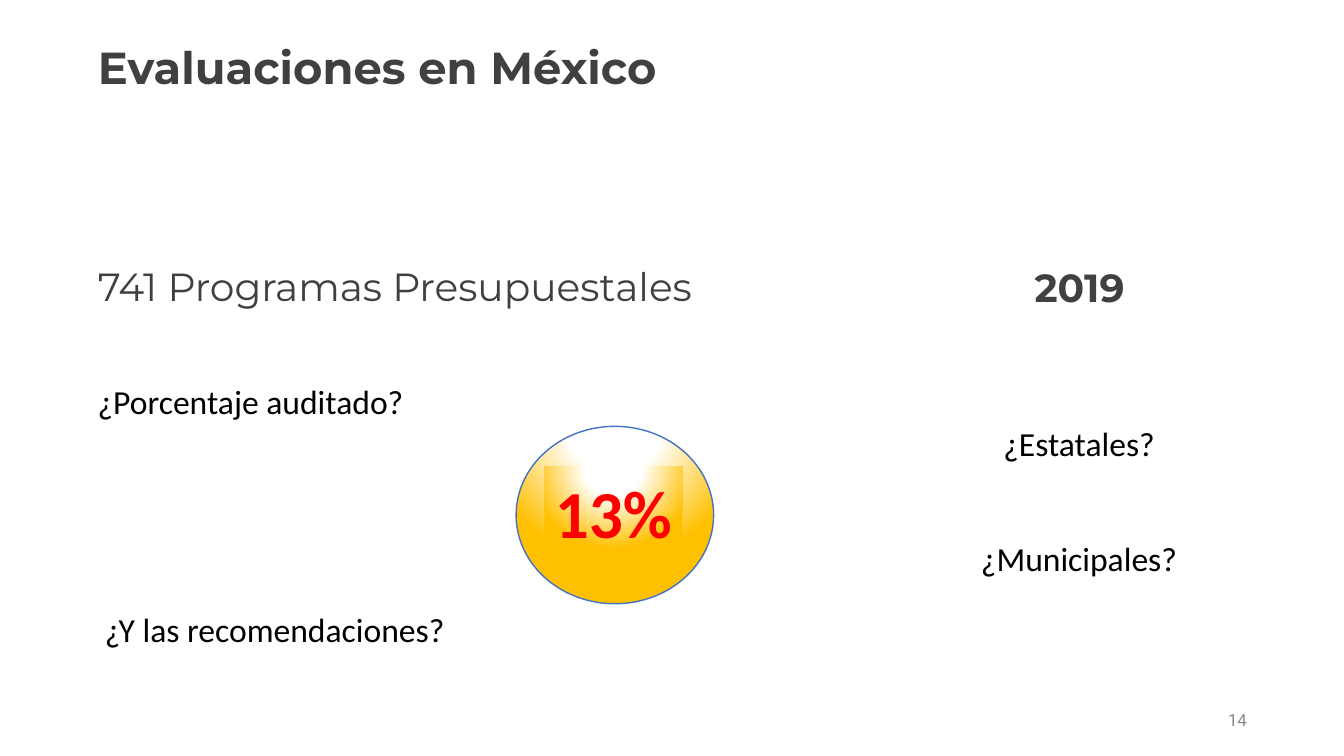
import dataclasses
import typing

import lxml.etree
import pptx
import pptx.dml.color
import pptx.enum.shapes
import pptx.enum.text
import pptx.oxml.ns
import pptx.util

Align = pptx.enum.text.PP_ALIGN
Anchor = pptx.enum.text.MSO_ANCHOR
AutoSize = pptx.enum.text.MSO_AUTO_SIZE
Preset = pptx.enum.shapes.MSO_SHAPE

CELL = pptx.util.Inches(0.1)
COLUMNS, ROWS = 133.33, 75


@dataclasses.dataclass(frozen=True)
class Theme:
    heading_font: str = "Montserrat"
    text_font: str = "Calibri"
    number_font: str = "Roboto"
    heading: str = "404040"
    text: str = "000000"
    number: str = "888888"
    accent: str = "FF0000"
    outline: str = "4472C4"
    glow: str = "FFFFFF"
    gold: str = "FFC000"
    title_size: int = 32
    heading_size: int = 28
    text_size: int = 24
    number_size: int = 12
    figure_size: int = 48


THEME = Theme()


class Area(typing.NamedTuple):
    column: float
    row: float
    columns: float
    rows: float

    def lengths(self) -> list[int]:
        return [round(value * CELL) for value in self]


@dataclasses.dataclass(frozen=True)
class Style:
    font: str
    size: int
    color: str
    bold: bool = False
    align: typing.Any = Align.CENTER
    anchor: typing.Any = Anchor.TOP
    side_inset: float = 0.1
    wrap: bool = False
    auto_size: typing.Any = AutoSize.SHAPE_TO_FIT_TEXT
    line_spacing: float = 1.0


@dataclasses.dataclass(frozen=True)
class Label:
    text: str
    area: Area
    style: Style


TITLE = Style(THEME.heading_font, THEME.title_size, THEME.heading, bold=True, align=Align.LEFT,
              side_inset=0.05, wrap=True, auto_size=AutoSize.NONE, line_spacing=0.9)
HEADING = dataclasses.replace(TITLE, size=THEME.heading_size, bold=False, anchor=Anchor.BOTTOM)
YEAR = dataclasses.replace(HEADING, bold=True, align=Align.CENTER)
QUESTION = Style(THEME.text_font, THEME.text_size, THEME.text)
WRAPPED_QUESTION = dataclasses.replace(QUESTION, wrap=True)
FIGURE = Style(THEME.text_font, THEME.figure_size, THEME.accent, bold=True)
NUMBER = Style(THEME.number_font, THEME.number_size, THEME.number, align=Align.RIGHT,
               anchor=Anchor.MIDDLE, side_inset=0.05)

PLACEHOLDERS = {
    0: Label("Evaluaciones en México", Area(9.2, 4, 66.9, 14.5), TITLE),
    1: Label("741 Programas Presupuestales", Area(9.2, 22.3, 62.1, 9), HEADING),
    3: Label("2019", Area(85.4, 22.4, 43.4, 9), YEAR),
}
LABELS = [
    Label("14", Area(121.3, 70, 2.9, 2.9), NUMBER),
    Label("¿Porcentaje auditado?", Area(8.4, 37.3, 32.9, 5), QUESTION),
    Label("¿Estatales?", Area(98.4, 41.5, 17.3, 5), QUESTION),
    Label("¿Municipales?", Area(96.2, 52.9, 21.7, 5), QUESTION),
    Label("¿Y las recomendaciones?", Area(9.2, 59.9, 36.1, 5), WRAPPED_QUESTION),
]
BALL = Area(51.2, 42.3, 19.6, 17.6)
PERCENTAGE = Label("13%", Area(54, 46.3, 13.7, 9.1), FIGURE)


def write_label(shape: typing.Any, label: Label) -> None:
    style = label.style
    shape.left, shape.top, shape.width, shape.height = label.area.lengths()
    frame = shape.text_frame
    frame.text = label.text
    frame.word_wrap = style.wrap
    frame.auto_size = style.auto_size
    frame.vertical_anchor = style.anchor
    frame.margin_left = frame.margin_right = pptx.util.Inches(style.side_inset)
    frame.margin_top = frame.margin_bottom = pptx.util.Inches(0.05)
    paragraph = frame.paragraphs[0]
    paragraph.alignment = style.align
    paragraph.line_spacing = style.line_spacing
    paragraph.space_before = pptx.util.Pt(0)
    font = paragraph.runs[0].font
    font.name = style.font
    font.size = pptx.util.Pt(style.size)
    font.bold = style.bold
    font.color.rgb = pptx.dml.color.RGBColor.from_string(style.color)


def add_golden_shape(slide: typing.Any, preset: typing.Any, area: Area) -> typing.Any:
    shape = slide.shapes.add_shape(preset, *area.lengths())
    shape.shadow.inherit = False
    shape.fill.gradient()
    qualified = pptx.oxml.ns.qn
    gradient = shape.element.spPr.find(qualified("a:gradFill"))
    for child in list(gradient):
        gradient.remove(child)
    stops = lxml.etree.SubElement(gradient, qualified("a:gsLst"))
    for percent, color in ((0, THEME.glow), (35, THEME.glow), (100, THEME.gold)):
        stop = lxml.etree.SubElement(stops, qualified("a:gs"), pos=str(percent * 1000))
        lxml.etree.SubElement(stop, qualified("a:srgbClr"), val=color)
    circle = lxml.etree.SubElement(gradient, qualified("a:path"), path="circle")
    lxml.etree.SubElement(circle, qualified("a:fillToRect"),
                          l="50000", t="-80000", r="50000", b="180000")
    return shape


def main() -> None:
    presentation = pptx.Presentation()
    presentation.slide_width = round(COLUMNS * CELL)
    presentation.slide_height = ROWS * CELL
    slide = presentation.slides.add_slide(presentation.slide_layouts.get_by_name("Comparison"))

    for placeholder in list(slide.placeholders):
        label = PLACEHOLDERS.get(placeholder.placeholder_format.idx)
        if label:
            write_label(placeholder, label)
        else:
            placeholder.element.getparent().remove(placeholder.element)

    ball = add_golden_shape(slide, Preset.OVAL, BALL)
    ball.line.color.rgb = pptx.dml.color.RGBColor.from_string(THEME.outline)
    ball.line.width = pptx.util.Pt(1)
    percentage = add_golden_shape(slide, Preset.RECTANGLE, PERCENTAGE.area)
    percentage.line.fill.background()
    write_label(percentage, PERCENTAGE)

    for label in LABELS:
        write_label(slide.shapes.add_textbox(*label.area.lengths()), label)

    presentation.save("out.pptx")


if __name__ == "__main__":
    main()
